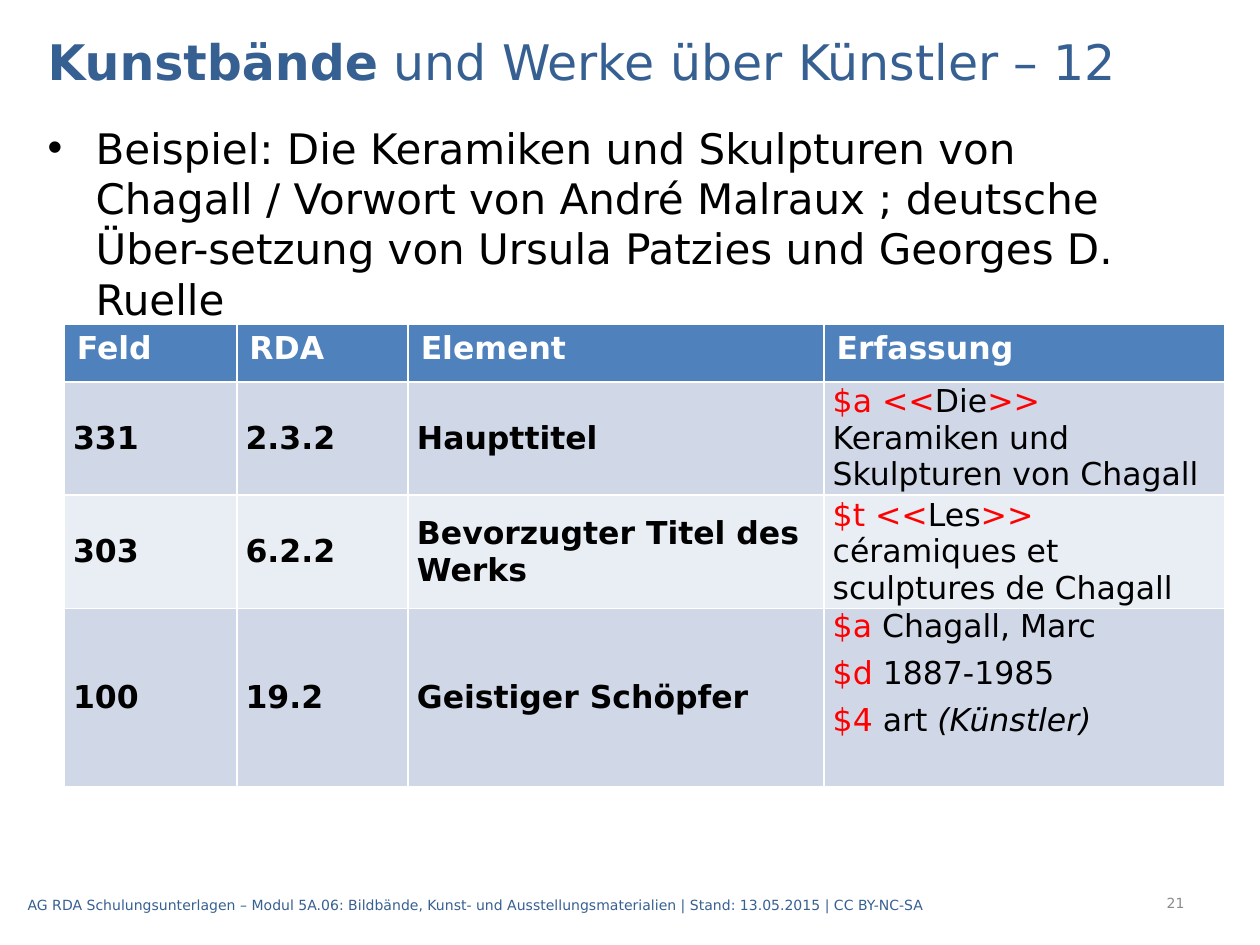
from lxml.etree import SubElement
from pptx import Presentation
from pptx.dml.color import RGBColor
from pptx.enum.text import MSO_ANCHOR as Anchor, PP_ALIGN as Align
from pptx.oxml.ns import qn
from pptx.util import Inches, Pt

FONT = "DejaVu Sans"
BLACK = RGBColor(0x00, 0x00, 0x00)
WHITE = RGBColor(0xFF, 0xFF, 0xFF)
RED = RGBColor(0xFF, 0x00, 0x00)
GREY = RGBColor(0x8C, 0x8C, 0x8C)
NAVY = RGBColor(0x37, 0x60, 0x92)
HEADER_BLUE = RGBColor(0x4F, 0x81, 0xBD)
BANDS = (RGBColor(0xD0, 0xD8, 0xE8), RGBColor(0xE9, 0xED, 0xF4))

# Content: a paragraph is a list of (text, format) spans
MARK = {"color": RED}
TITLE = [("Kunstbände", {"bold": True}), (" und Werke über Künstler – 12", {})]
EXAMPLE = [("Beispiel: Die Keramiken und Skulpturen von Chagall / Vorwort von "
            "André Malraux ; deutsche Über-setzung von Ursula Patzies und "
            "Georges D. Ruelle", {})]
FOOTER = [("AG RDA Schulungsunterlagen – Modul 5A.06: Bildbände, Kunst- und "
           "Ausstellungsmaterialien | Stand: 13.05.2015 | CC BY-NC-SA", {})]
PAGE_NUMBER = [("21", {})]

HEADERS = ["Feld", "RDA", "Element", "Erfassung"]
RECORDS = [
    ("331", "2.3.2", "Haupttitel",
     [[("$a <<", MARK), ("Die", {}), (">>", MARK),
       (" Keramiken und Skulpturen von Chagall", {})]]),
    ("303", "6.2.2", "Bevorzugter Titel des Werks",
     [[("$t <<", MARK), ("Les", {}), (">> ", MARK),
       ("céramiques et sculptures de Chagall", {})]]),
    ("100", "19.2", "Geistiger Schöpfer",
     [[("$a ", MARK), ("Chagall, Marc", {})],
      [("$d ", MARK), ("1887-1985", {})],
      [("$4 ", MARK), ("art ", {}), ("(Künstler)", {"italic": True})]]),
]
COLUMN_WIDTHS = [1.37, 1.36, 3.3, 3.18]
ROW_HEIGHTS = [0.46, 0.87, 0.87, 1.41]


def write(frame, paragraphs, size=18, color=BLACK, bold=False,
          align=Align.LEFT, after=0, bullet=None):
    for index, spans in enumerate(paragraphs):
        para = frame.paragraphs[0] if index == 0 else frame.add_paragraph()
        para.alignment = align
        para.space_after = Pt(after)
        if bullet:
            props = para._p.get_or_add_pPr()
            props.set("marL", str(Inches(0.38)))
            props.set("indent", str(-Inches(0.38)))
            SubElement(props, qn("a:buFont"), typeface="Arial")
            SubElement(props, qn("a:buChar"), char=bullet)
        for text, style in spans:
            span = para.add_run()
            span.text = text
            font = span.font
            font.name, font.size = FONT, Pt(size)
            font.bold = style.get("bold", bold)
            font.italic = style.get("italic", False)
            font.color.rgb = style.get("color", color)


def add_text(page, place, spans, anchor=Anchor.MIDDLE, **style):
    box = page.shapes.add_textbox(*map(Inches, place))
    frame = box.text_frame
    frame.word_wrap = True
    frame.vertical_anchor = anchor
    write(frame, [spans], **style)


def fill_cell(cell, color):
    cell.fill.solid()
    cell.fill.fore_color.rgb = color


def add_records(page):
    # The default table style supplies the white cell borders
    table = page.shapes.add_table(
        len(ROW_HEIGHTS), len(COLUMN_WIDTHS), Inches(0.51), Inches(2.57),
        Inches(sum(COLUMN_WIDTHS)), Inches(sum(ROW_HEIGHTS))).table
    for column, width in zip(table.columns, COLUMN_WIDTHS):
        column.width = Inches(width)
    for row, height in zip(table.rows, ROW_HEIGHTS):
        row.height = Inches(height)

    # Header row
    for column, header in enumerate(HEADERS):
        cell = table.cell(0, column)
        fill_cell(cell, HEADER_BLUE)
        write(cell.text_frame, [[(header, {})]], color=WHITE, bold=True)

    # Record rows; the list of subfields starts at the top of its cell
    for row, record in enumerate(RECORDS, start=1):
        for column, content in enumerate(record):
            cell = table.cell(row, column)
            fill_cell(cell, BANDS[(row - 1) % 2])
            cell.margin_left = cell.margin_right = Inches(0.07)
            cell.margin_top = cell.margin_bottom = 0
            is_label = isinstance(content, str)
            paragraphs = [[(content, {})]] if is_label else content
            cell.vertical_anchor = Anchor.TOP if len(paragraphs) > 1 else Anchor.MIDDLE
            write(cell.text_frame, paragraphs, bold=is_label, after=6)


def main():
    deck = Presentation()
    deck.slide_width, deck.slide_height = Inches(10), Inches(7.5)
    page = deck.slides.add_slide(deck.slide_layouts[6])

    add_text(page, (0.28, 0.92, 9.45, 5.98), EXAMPLE, anchor=Anchor.TOP,
             size=24, bullet="•")
    add_text(page, (7.91, 6.97, 1.59, 0.4), PAGE_NUMBER, size=8, color=GREY,
             align=Align.RIGHT)
    add_text(page, (0.12, 6.98, 9.21, 0.4), FOOTER, size=8, color=NAVY)
    add_records(page)
    add_text(page, (0.28, 0.2, 9.45, 0.56), TITLE, size=28, color=NAVY)

    deck.save("out.pptx")


if __name__ == "__main__":
    main()
